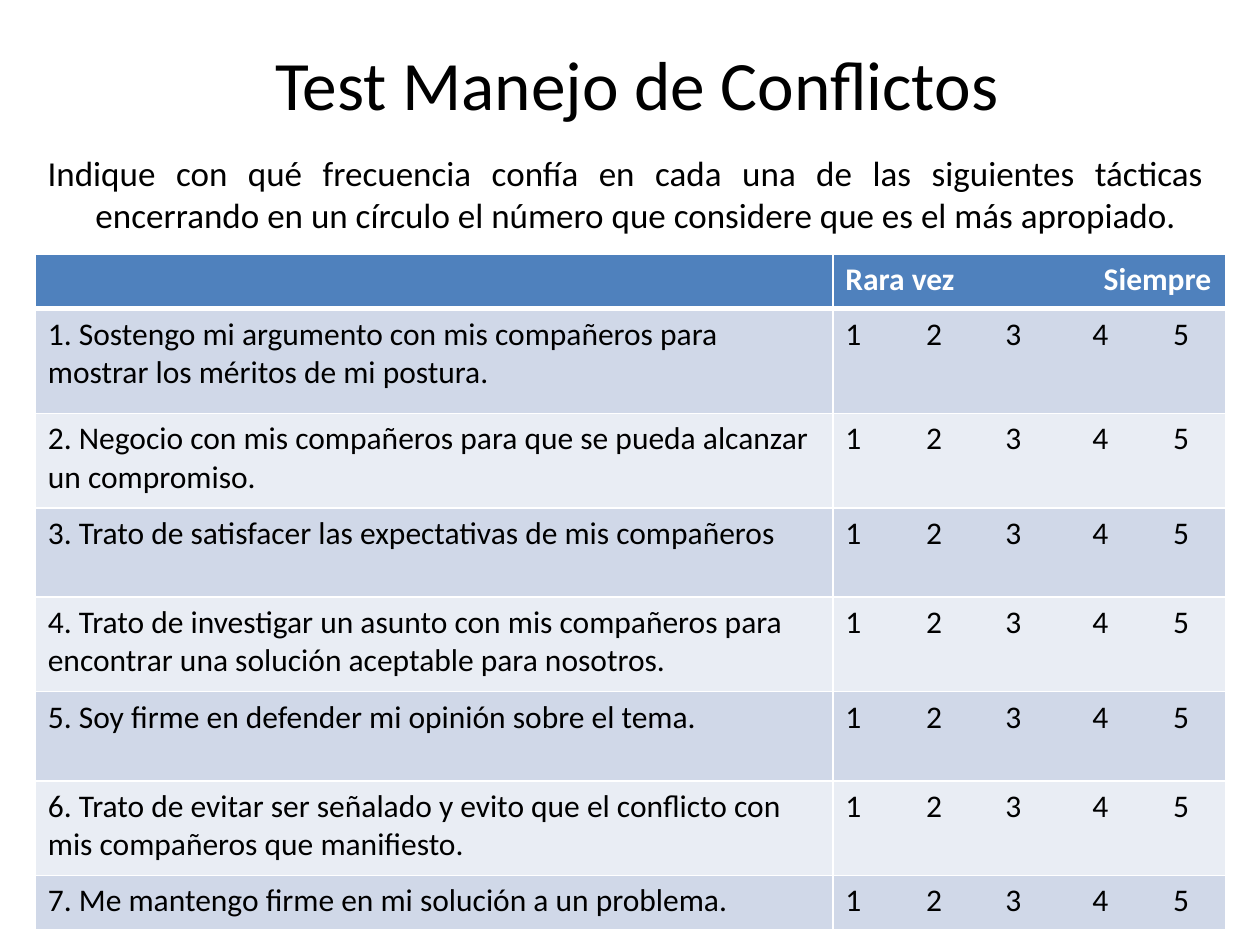
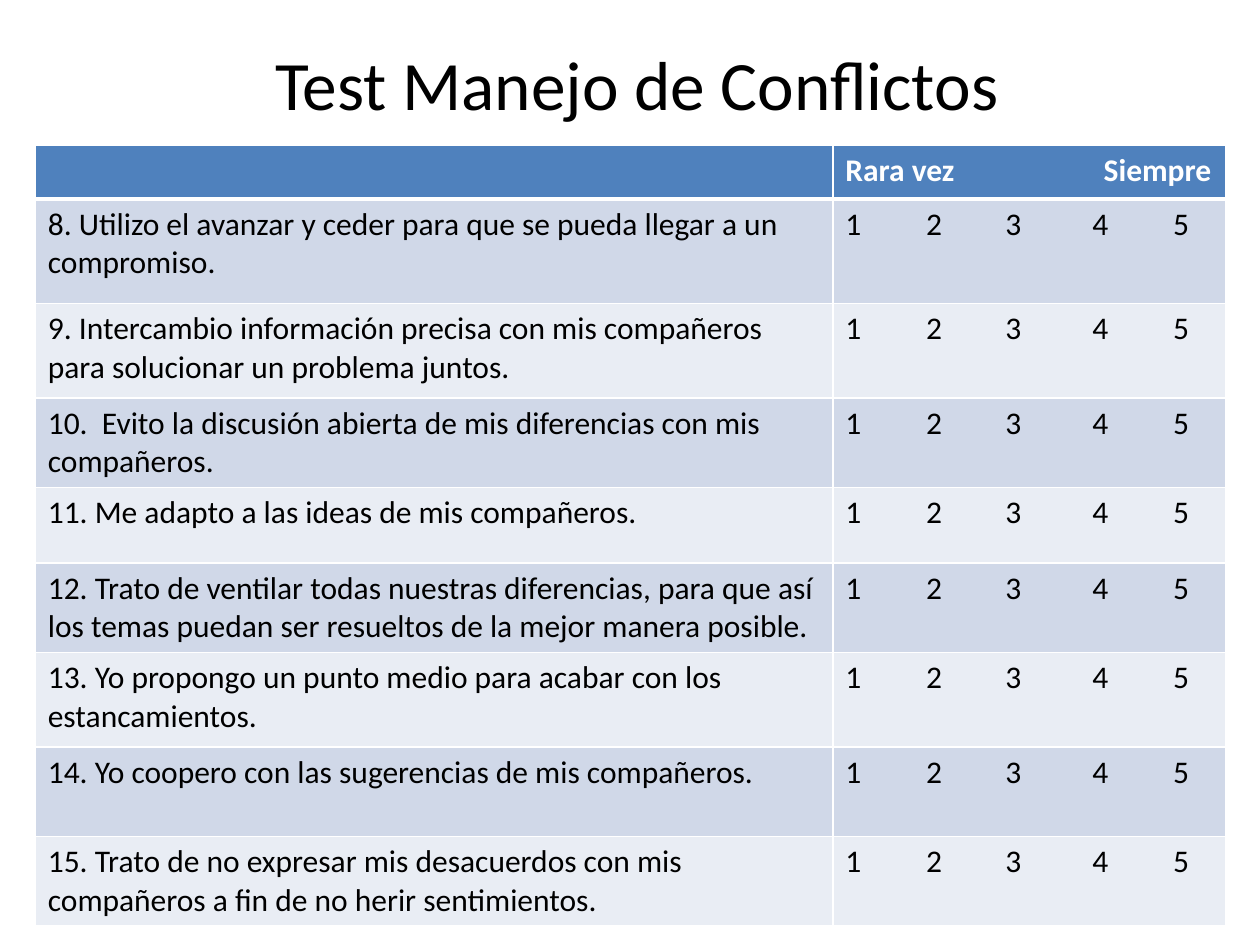
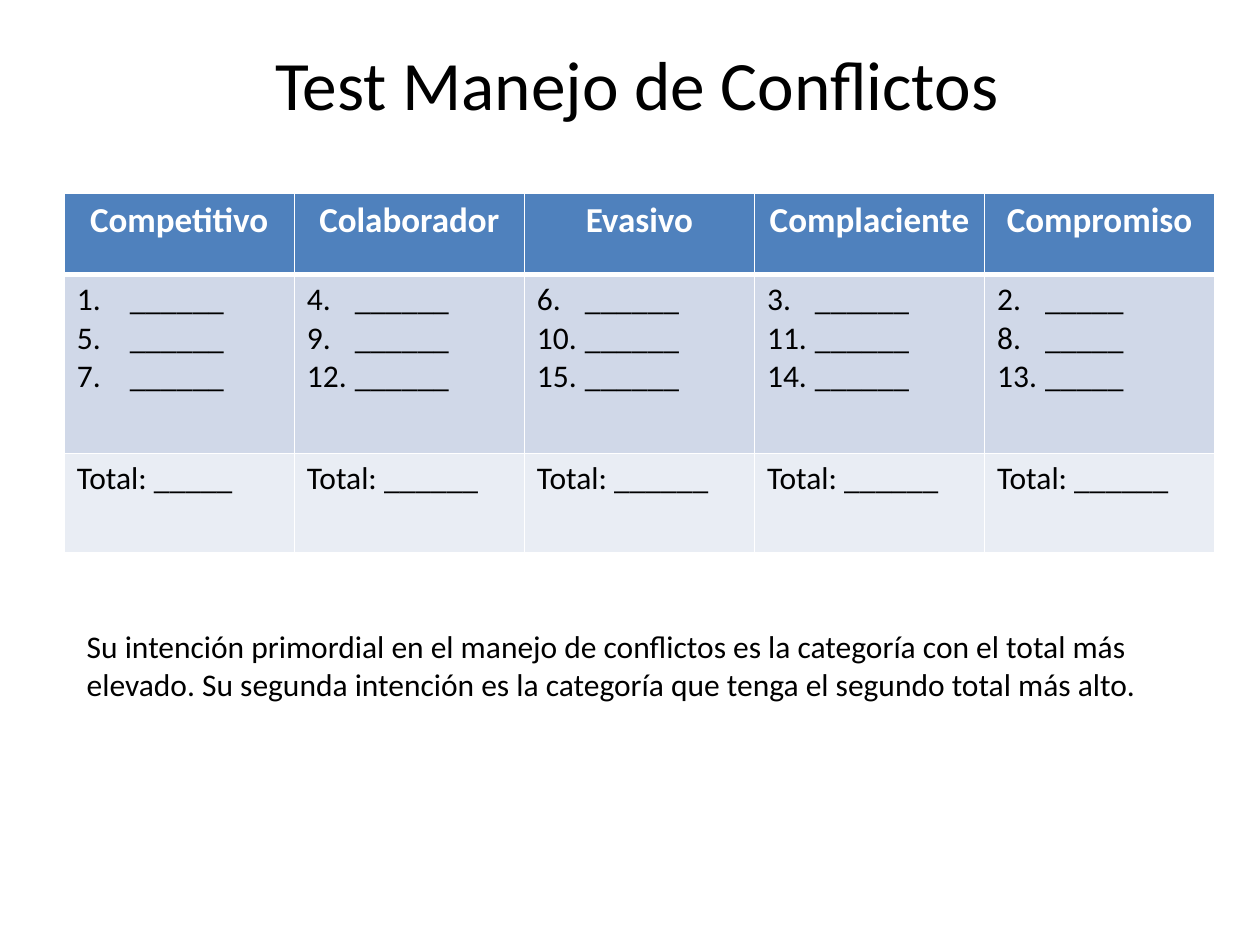
from dataclasses import dataclass

from lxml.etree import SubElement as Sub
from pptx import Presentation
from pptx.dml.color import RGBColor as RGB
from pptx.enum.text import MSO_ANCHOR as Anchor, PP_ALIGN as Align
from pptx.oxml.ns import qn
from pptx.util import Inches, Pt


@dataclass(frozen=True)
class Theme:
    font: str = "Calibri"
    ink: str = "000000"
    white: str = "FFFFFF"
    head: str = "4F81BD"
    bands: tuple = ("D0D8E8", "E9EDF4")
    title: float = 39.6
    lead: float = 20
    body: float = 18
    thin: float = 1
    thick: float = 3


T = Theme()

TITLE = "Test Manejo de Conflictos"
LEAD = ("Indique con qué frecuencia confía en cada una de las siguientes tácticas "
        "encerrando en un círculo el número que considere que es el más apropiado.")
CLOSE = ("Su intención primordial en el manejo de conflictos es la categoría con el total "
         "más elevado. Su segunda intención es la categoría que tenga el segundo total más alto.")

# Each item: statement, row height
FIRST = [
    ("1. Sostengo mi argumento con mis compañeros para mostrar los méritos de mi postura.", 0.83),
    ("2. Negocio con mis compañeros para que se pueda alcanzar un compromiso.", 0.75),
    ("3. Trato de satisfacer las expectativas de mis compañeros", 0.71),
    ("4. Trato de investigar un asunto con mis compañeros para encontrar una solución "
     "aceptable para nosotros.", 0.75),
    ("5. Soy firme en defender mi opinión sobre el tema.", 0.71),
    ("6. Trato de evitar ser señalado y evito que el conflicto con mis compañeros "
     "que manifiesto.", 0.75),
    ("7. Me mantengo firme en mi solución a un problema.", 0.43),
]
SECOND = [
    ("8. Utilizo el avanzar y ceder para que se pueda llegar a un compromiso.", 0.83),
    ("9. Intercambio información precisa con mis compañeros para solucionar un problema "
     "juntos.", 0.75),
    ("10.  Evito la discusión abierta de mis diferencias con mis compañeros.", 0.71),
    ("11. Me adapto a las ideas de mis compañeros.", 0.6),
    ("12. Trato de ventilar todas nuestras diferencias, para que así los temas puedan ser "
     "resueltos de la mejor manera posible.", 0.71),
    ("13. Yo propongo un punto medio para acabar con los estancamientos.", 0.75),
    ("14. Yo coopero con las sugerencias de mis compañeros.", 0.71),
    ("15. Trato de no expresar mis desacuerdos con mis compañeros a fin de no herir "
     "sentimientos.", 0.71),
]
ENDS = "Rara vez\tSiempre"
SCALE = "1\t2\t3\t4\t5"
END_TABS = [2.05]
SCALE_TABS = [0.64, 1.27, 1.96, 2.6]

# Each style: name, item numbers, blank length, total length, number indent
STYLES = [
    ("Competitivo", (1, 5, 7), 6, 5, 0.42),
    ("Colaborador", (4, 9, 12), 6, 6, 0.38),
    ("Evasivo", (6, 10, 15), 6, 6, 0.38),
    ("Complaciente", (3, 11, 14), 6, 6, 0.38),
    ("Compromiso", (2, 8, 13), 5, 6, 0.38),
]


def write(frame, lines, size=T.body, color=T.ink, bold=False, align=Align.LEFT):
    frame.text = "\n".join(lines)
    for para in frame.paragraphs:
        para.alignment = align
        look = {"name": T.font, "size": Pt(size), "bold": bold}
        for font in [para.font] + [run.font for run in para.runs]:
            for key, val in look.items():
                setattr(font, key, val)
            font.color.rgb = RGB.from_string(color)


def hang(para, gap):
    """Set a hanging indent."""
    props = para._p.get_or_add_pPr()
    props.set("marL", str(Inches(gap)))
    props.set("indent", str(-Inches(gap)))
    return props


def number(para, start, gap):
    # Bullet and tab elements precede the default run properties
    node = hang(para, gap).makeelement(
        qn("a:buAutoNum"), {"type": "arabicPeriod", "startAt": str(start)})
    para._p.pPr.insert(0, node)


def tab(para, stops):
    props = para._p.get_or_add_pPr()
    tabs = props.makeelement(qn("a:tabLst"), {})
    for stop in stops:
        Sub(tabs, qn("a:tab"), pos=str(Inches(stop)), algn="l")
    props.insert(0, tabs)


def edge(cell, low):
    """Draw white cell borders, with the given weight below."""
    props = cell._tc.get_or_add_tcPr()
    for side in "LRTB":
        weight = low if side == "B" else T.thin
        line = Sub(props, qn(f"a:ln{side}"), w=str(Pt(weight)))
        Sub(Sub(line, qn("a:solidFill")), qn("a:srgbClr"), val=T.white)


def text(slide, box, words, **look):
    frame = slide.shapes.add_textbox(*map(Inches, box)).text_frame
    frame.word_wrap = True
    write(frame, [words], **look)
    return frame


def page(deck):
    slide = deck.slides.add_slide(deck.slide_layouts[6])
    frame = text(slide, (0.83, 0.29, 8.45, 0.74), TITLE, size=T.title, align=Align.CENTER)
    frame.vertical_anchor = Anchor.MIDDLE
    return slide


def grid(slide, left, top, cols, rows):
    """Add a table with a header band and alternating row fills."""
    box = map(Inches, (left, top, sum(cols), sum(rows)))
    table = slide.shapes.add_table(len(rows), len(cols), *box).table
    table.first_row = table.horz_banding = False
    for col, width in zip(table.columns, cols):
        col.width = Inches(width)
    for i, (row, height) in enumerate(zip(table.rows, rows)):
        row.height = Inches(height)
        for cell in row.cells:
            edge(cell, T.thin if i else T.thick)
            cell.fill.solid()
            cell.fill.fore_color.rgb = RGB.from_string(T.bands[(i - 1) % 2] if i else T.head)
    return table


def survey(slide, top, items):
    table = grid(slide, 0.28, top, [6.33, 3.12], [0.43] + [tall for _, tall in items])
    rows = [("", ENDS, END_TABS)] + [(item, SCALE, SCALE_TABS) for item, _ in items]
    for i, (item, marks, stops) in enumerate(rows):
        look = {} if i else {"color": T.white, "bold": True}
        for j, words in enumerate((item, marks)):
            write(table.cell(i, j).text_frame, [words], **look)
        tab(table.cell(i, 1).text_frame.paragraphs[0], stops)


def score(slide):
    table = grid(slide, 0.51, 1.53, [9.13 / len(STYLES)] * len(STYLES), [0.65, 1.42, 0.79])
    for j, (name, items, blank, total, gap) in enumerate(STYLES):
        head, body, foot = (table.cell(i, j).text_frame for i in range(3))
        write(head, [name], size=T.lead, color=T.white, bold=True, align=Align.CENTER)
        write(body, ["_" * blank] * len(items))
        for para, item in zip(body.paragraphs, items):
            number(para, item, gap)
        write(foot, ["Total: " + "_" * total])


def main():
    deck = Presentation()
    deck.slide_width, deck.slide_height = Inches(10), Inches(7.5)

    slide = page(deck)
    lead = text(slide, (0.28, 1.15, 9.37, 0.66), LEAD, size=T.lead, align=Align.JUSTIFY)
    hang(lead.paragraphs[0], 0.38)
    lead.paragraphs[0].space_before = Pt(4)
    survey(slide, 2.02, FIRST)

    survey(page(deck), 1.15, SECOND)

    slide = page(deck)
    score(slide)
    text(slide, (0.59, 4.93, 9.06, 0.71), CLOSE)

    deck.save("out.pptx")


if __name__ == "__main__":
    main()
